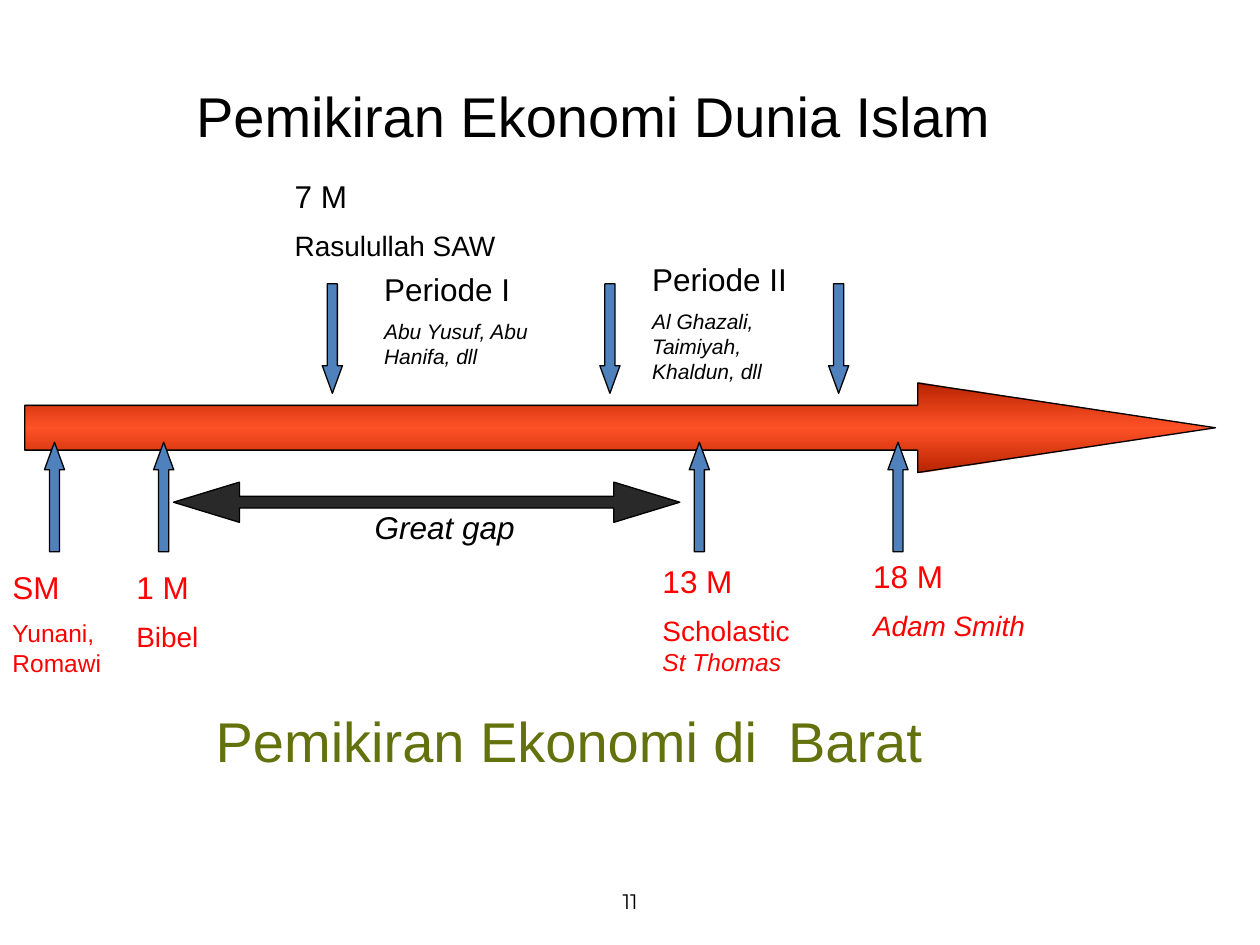
import pptx
import pptx.util
import pptx.dml.color
import pptx.enum.shapes
import pptx.enum.text
import pptx.oxml
import pptx.oxml.ns

Pt = pptx.util.Pt
RGBColor = pptx.dml.color.RGBColor
SHAPE = pptx.enum.shapes.MSO_SHAPE

BLACK = RGBColor(0x00, 0x00, 0x00)
RED = RGBColor(0xFF, 0x00, 0x00)
OLIVE = RGBColor(0x63, 0x72, 0x0C)
BLUE = RGBColor(0x4F, 0x81, 0xBD)
CHARCOAL = RGBColor(0x29, 0x29, 0x29)
FLAME = RGBColor(0xFF, 0x33, 0x00)
RUST = RGBColor(0xB6, 0x24, 0x00)
MARKER_WIDTH, MARKER_HEIGHT = 11.5, 62.6


def place(box, left, top, width, height):
    """Return the lengths of a part placed relative to the region box."""
    return [Pt(value) for value in (box[0] + left, box[1] + top, width, height)]


def add_text(slide, area, paragraphs, color, font="Arial"):
    """Add a text box from paragraphs of (text, size, italic) runs."""
    shape = slide.shapes.add_textbox(*area)
    frame = shape.text_frame
    frame.word_wrap = True
    for index, runs in enumerate(paragraphs):
        paragraph = frame.add_paragraph() if index else frame.paragraphs[0]
        if index:
            paragraph.space_before = Pt(runs[0][1] / 2)
        for text, size, italic in runs:
            run = paragraph.add_run()
            run.text = text
            run.font.name = font
            run.font.size = Pt(size)
            run.font.italic = italic
            run.font.color.rgb = color
    return shape


def add_arrow(slide, kind, area, adjustments, color):
    """Add a block arrow with a thin black outline."""
    shape = slide.shapes.add_shape(kind, *area)
    shape.shadow.inherit = False
    for index, value in enumerate(adjustments):
        shape.adjustments[index] = value
    shape.fill.solid()
    shape.fill.fore_color.rgb = color
    shape.line.color.rgb = BLACK
    shape.line.width = Pt(0.75)
    return shape


def add_markers(slide, box, kind, lefts, top):
    """Add a row of equal date markers."""
    for left in lefts:
        area = place(box, left, top, MARKER_WIDTH, MARKER_HEIGHT)
        add_arrow(slide, kind, area, (0.5, 1.37), BLUE)


def draw_timeline(slide, box):
    """Draw the long time arrow with its mirrored gradient."""
    shape = add_arrow(slide, SHAPE.RIGHT_ARROW, place(box, 0, 0, *box[2:]), (0.5, 3.33), FLAME)
    shape.fill.gradient()
    shape.fill.gradient_angle = 90
    stops = shape.fill._fill._gradFill.find(pptx.oxml.ns.qn("a:gsLst"))
    for stop in list(stops):
        stops.remove(stop)
    for position, color, alpha in ((0, RUST, 100), (50, FLAME, 84), (100, RUST, 100)):
        stops.append(pptx.oxml.parse_xml(
            f'<a:gs {pptx.oxml.ns.nsdecls("a")} pos="{position * 1000}">'
            f'<a:srgbClr val="{color}"><a:alpha val="{alpha * 1000}"/></a:srgbClr></a:gs>'))


def draw_islamic_thought(slide, box):
    """Draw the title, markers and periods above the timeline."""
    add_markers(slide, box, SHAPE.DOWN_ARROW, (184.2, 342.8, 473.5), 119)
    labels = (
        ((161.3, 54.5, 130.3, 57.6), [[("7 M", 18, False)], [("Rasulullah SAW", 16, False)]]),
        ((212.4, 107.6, 102.2, 64.8),
         [[("Periode I", 18, False)], [("Abu Yusuf, Abu Hanifa, dll", 12, True)]]),
        ((365.6, 101.8, 102.2, 79.2),
         [[("Periode II", 18, False)], [("Al Ghazali, Taimiyah, Khaldun, dll", 12, True)]]),
        ((105, 0, 470.9, 45.4), [[("Pemikiran Ekonomi Dunia Islam", 32, False)]]),
    )
    for area, paragraphs in labels:
        add_text(slide, place(box, *area), paragraphs, BLACK)


def draw_western_thought(slide, box):
    """Draw the markers, great gap, dates and title below the timeline."""
    add_markers(slide, box, SHAPE.UP_ARROW, (25.4, 87.8, 393.9, 507.4), 0)
    add_arrow(slide, SHAPE.LEFT_RIGHT_ARROW, place(box, 99.1, 22.8, 289.4, 23),
              (0.29, 1.64), CHARCOAL)
    labels = (
        ((207, 34.2, 118.8, 28.8), BLACK, [[("Great gap", 18, True)]]),
        ((0, 68.4, 68, 70.6), RED,
         [[("SM", 18, False)], [("Yunani, Romawi", 14, False)]]),
        ((70.8, 68.4, 73.4, 57.6), RED, [[("1 M", 18, False)], [("Bibel", 16, False)]]),
        ((371.5, 64.8, 90.7, 74.2), RED,
         [[("13 M", 18, False)], [("Scholastic ", 16, False), ("St Thomas", 14, True)]]),
        ((491.8, 61.9, 118.1, 57.6), RED, [[("18 M", 18, False)], [("Adam Smith", 16, True)]]),
        ((116.2, 147.6, 453.6, 45.4), OLIVE, [[("Pemikiran Ekonomi di  Barat", 32, False)]]),
    )
    for area, color, paragraphs in labels:
        add_text(slide, place(box, *area), paragraphs, color)


def draw_page_number(slide, box):
    """Draw the centred page number."""
    shape = add_text(slide, place(box, 0, 0, *box[2:]), [[("11", 12, False)]], BLACK, "Montserrat")
    shape.text_frame.vertical_anchor = pptx.enum.text.MSO_ANCHOR.MIDDLE
    shape.text_frame.paragraphs[0].alignment = pptx.enum.text.PP_ALIGN.CENTER


def main():
    """Build and save the slide."""
    presentation = pptx.Presentation()
    presentation.slide_width, presentation.slide_height = Pt(720), Pt(540)
    slide = presentation.slides.add_slide(presentation.slide_layouts[6])
    draw_page_number(slide, (246, 500.4, 228.2, 28.8))
    draw_timeline(slide, (14.2, 218.9, 680.4, 51.1))
    draw_western_thought(slide, (0, 252.7, 720, 193))
    draw_islamic_thought(slide, (0, 43.2, 720, 181.4))
    presentation.save("out.pptx")


if __name__ == "__main__":
    main()
